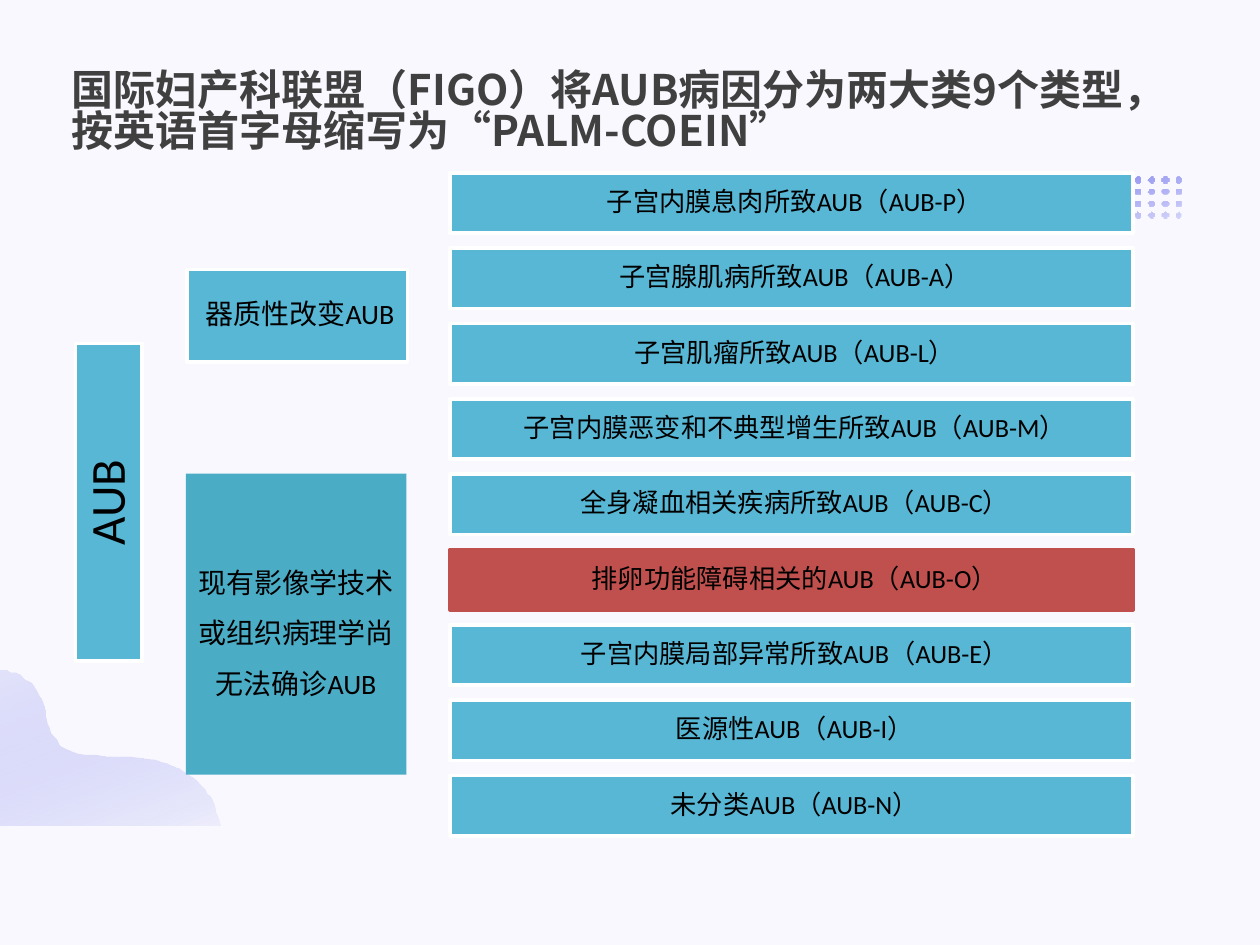
from itertools import product
from math import cos, pi, sin

from lxml.etree import SubElement
from pptx import Presentation
from pptx.dml.color import RGBColor
from pptx.enum.shapes import MSO_SHAPE as Preset
from pptx.enum.text import MSO_ANCHOR as Anchor, MSO_AUTO_SIZE as AutoSize, PP_ALIGN as Align
from pptx.oxml.ns import qn
from pptx.util import Pt

COLORS = {
    "page": "F8F8FE", "title": "404040", "text": "000000", "white": "FFFFFF",
    "blue": "57B7D5", "teal": "4BACC6", "red": "C0504D",
    "pale": "E8E8FC", "lilac": "D1D2F9", "violet": "8C8EF0",
}
TITLE = "国际妇产科联盟（FIGO）将AUB病因分为两大类9个类型，按英语首字母缩写为“PALM-COEIN”"
CAUSES = [
    "子宫内膜息肉所致AUB（AUB-P）",
    "子宫腺肌病所致AUB（AUB-A）",
    "子宫肌瘤所致AUB（AUB-L）",
    "子宫内膜恶变和不典型增生所致AUB（AUB-M）",
    "全身凝血相关疾病所致AUB（AUB-C）",
    "排卵功能障碍相关的AUB（AUB-O）",
    "子宫内膜局部异常所致AUB（AUB-E）",
    "医源性AUB（AUB-I）",
    "未分类AUB（AUB-N）",
]
HIGHLIGHT = 5
WAVE_START = (2, 383)
WAVE_CURVES = [
    [(7, 383.5), (11, 385), (14, 387.5)],
    [(31, 399), (21, 413), (34.5, 425.5)],
    [(48, 437), (83, 425), (108, 443)],
    [(116.5, 448.5), (121.5, 457), (124, 466)],
]


def rgb(name):
    return RGBColor.from_string(COLORS[name])


def assign(target, values):
    for name, value in values.items():
        setattr(target, name, value)


def place(shape, left, top, width, height):
    assign(shape, {"left": Pt(left), "top": Pt(top), "width": Pt(width), "height": Pt(height)})


def write(shape, text, size, spacing, color="text", font="Calibri", bold=False,
          align=Align.CENTER, anchor=Anchor.MIDDLE, insets=(1, 1, 1, 1)):
    frame = shape.text_frame
    assign(frame, {"word_wrap": True, "auto_size": AutoSize.NONE, "vertical_anchor": anchor})
    sides = ("margin_left", "margin_top", "margin_right", "margin_bottom")
    assign(frame, {side: Pt(inset) for side, inset in zip(sides, insets)})
    para = frame.paragraphs[0]
    assign(para, {"alignment": align, "line_spacing": spacing})
    span = para.add_run()
    span.text = text
    assign(span.font, {"name": font, "size": Pt(size), "bold": bold})
    span.font.color.rgb = rgb(color)
    return span


def add_title(page):
    title = page.shapes.title
    place(title, 41, 33, 638, 55.5)
    span = write(title, TITLE, 24, 0.82, "title", "Noto Sans CJK SC", True,
                 Align.LEFT, Anchor.BOTTOM, (0, 0, 0, 0))
    SubElement(span.font._element, qn("a:ea")).set("typeface", "Noto Sans CJK SC")


def add_box(page, bounds, text, size, fill="blue", line="white", spacing=0.9, indent=1, rotation=0):
    box = page.shapes.add_shape(Preset.RECTANGLE, *map(Pt, bounds))
    box.shadow.inherit = False
    box.rotation = rotation
    box.fill.solid()
    box.fill.fore_color.rgb = rgb(fill)
    if line:
        box.line.color.rgb = rgb(line)
        box.line.width = Pt(2)
    else:
        box.line.fill.background()
    write(box, text, size, spacing, insets=(indent, 1, 1, 1))


def add_outline(page, contours, stops):
    first, *others = contours
    builder = page.shapes.build_freeform(*first[0], scale=Pt(1))
    builder.add_line_segments(first[1:], close=True)
    for contour in others:
        builder.move_to(*contour[0])
        builder.add_line_segments(contour[1:], close=True)
    outline = builder.convert_to_shape()
    outline.shadow.inherit = False
    outline.line.fill.background()
    outline.fill.gradient()
    outline.fill.gradient_angle = 110
    for stop, (color, opacity) in zip(outline.fill.gradient_stops, stops):
        stop.color.rgb = rgb(color)
        if opacity < 100:
            value = stop._gs.find(qn("a:srgbClr"))
            SubElement(value, qn("a:alpha")).set("val", str(opacity * 1000))


def circle(x, y, radius, sides=16):
    angles = [2 * pi * step / sides for step in range(sides)]
    return [(x + radius * cos(angle), y + radius * sin(angle)) for angle in angles]


def curve(start, first, second, end, steps=12):
    def blend(t, a, b, c, d):
        u = 1 - t
        return u**3 * a + 3 * u * u * t * b + 3 * u * t * t * c + t**3 * d

    values = [step / steps for step in range(1, steps + 1)]
    return [tuple(blend(t, *axis) for axis in zip(start, first, second, end)) for t in values]


def add_decoration(page):
    dots = [circle(627.2 + 7.75 * column, 103 + 6.7 * row, 1.7)
            for row, column in product(range(4), range(7))]
    add_outline(page, dots, [("lilac", 100), ("violet", 100)])
    wave = [(0, 472.5), (0, 383), WAVE_START]
    for points in WAVE_CURVES:
        wave += curve(wave[-1], *points)
    wave.append((125.5, 472.5))
    add_outline(page, [wave], [("pale", 70), ("violet", 20)])


def add_causes(page):
    for row, cause in enumerate(CAUSES):
        marked = row == HIGHLIGHT
        add_box(page, (257.25, 98.75 + 43.05 * row, 390.25, 34.5), cause, 15,
                "red" if marked else "blue", "red" if marked else "white", indent=4.5)


def main():
    deck = Presentation()
    assign(deck, {"slide_width": Pt(720), "slide_height": Pt(540)})
    page = deck.slides.add_slide(deck.slide_layouts[5])
    page.background.fill.solid()
    page.background.fill.fore_color.rgb = rgb("page")
    add_decoration(page)
    add_title(page)
    add_box(page, (-28.5, 268, 181.5, 38), "AUB", 28, rotation=270)
    add_box(page, (106.75, 154, 126, 53), "器质性改变AUB", 16, indent=4.5)
    add_box(page, (106.25, 270.75, 126, 172), "现有影像学技术或组织病理学尚无法确诊AUB", 16,
            "teal", None, 1.5)
    add_causes(page)
    deck.save("out.pptx")


if __name__ == "__main__":
    main()
